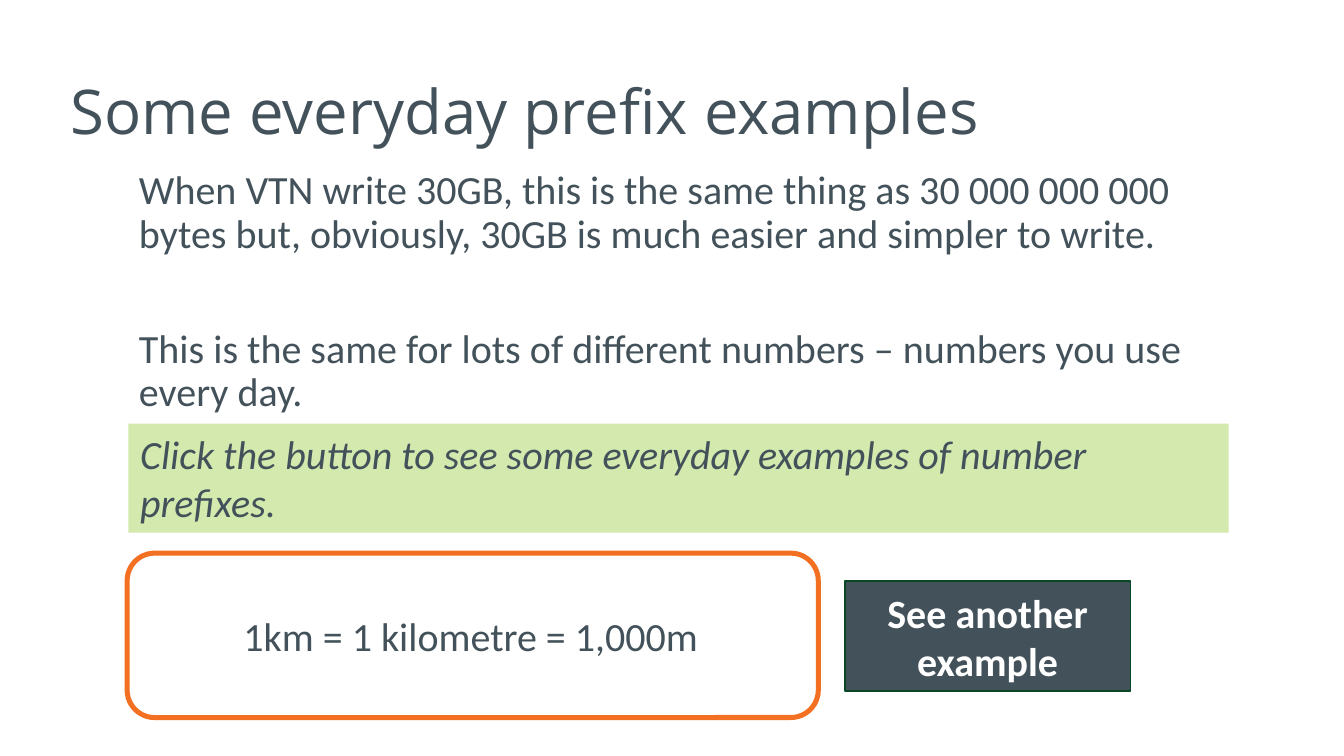
from pptx import Presentation
from pptx.dml.color import RGBColor
from pptx.enum.shapes import MSO_SHAPE
from pptx.enum.text import MSO_ANCHOR, PP_ALIGN
from pptx.util import Inches, Pt

SLATE = RGBColor(0x43, 0x52, 0x5A)
WHITE = RGBColor(0xFF, 0xFF, 0xFF)
ORANGE = RGBColor(0xF3, 0x6F, 0x21)
LIME = RGBColor(0xD3, 0xE9, 0xAD)
FOREST = RGBColor(0x09, 0x47, 0x24)


class SlideBuilder:
    heading_font = "Open Sans"
    body_font = "Calibri"
    body_size = 24
    line_spacing = 0.9

    def __init__(self, deck):
        self.page = deck.slides.add_slide(deck.slide_layouts[6])

    def fill_text(self, shape, texts, font=body_font, size=body_size, color=SLATE,
                  bold=False, italic=False, align=PP_ALIGN.LEFT,
                  anchor=MSO_ANCHOR.TOP, wrap=True):
        frame = shape.text_frame
        frame.word_wrap = wrap
        frame.vertical_anchor = anchor
        frame.text = "\n".join(texts)
        for para in frame.paragraphs:
            para.alignment = align
            for span in para.runs:
                span.font.name = font
                span.font.size = Pt(size)
                span.font.color.rgb = color
                span.font.bold = bold
                span.font.italic = italic
        return frame.paragraphs

    def text(self, bounds, texts, **style):
        box = self.page.shapes.add_textbox(*map(Inches, bounds))
        return self.fill_text(box, texts, **style)

    def title(self, bounds, text):
        paragraphs = self.text(bounds, [text], font=self.heading_font, size=37,
                               anchor=MSO_ANCHOR.MIDDLE)
        paragraphs[0].line_spacing = self.line_spacing

    def body(self, bounds, texts, first_gap, next_gap):
        for index, para in enumerate(self.text(bounds, texts)):
            para.line_spacing = self.line_spacing
            para.space_before = Pt(next_gap if index else first_gap)

    def panel(self, kind, bounds, fill=None, line=None, line_width=1):
        shape = self.page.shapes.add_shape(kind, *map(Inches, bounds))
        shape.shadow.inherit = False
        if fill is None:
            shape.fill.background()
        else:
            shape.fill.solid()
            shape.fill.fore_color.rgb = fill
        if line is None:
            shape.line.fill.background()
        else:
            shape.line.color.rgb = line
            shape.line.width = Pt(line_width)
        return shape


def main():
    deck = Presentation()
    deck.slide_width = Inches(11.2)
    deck.slide_height = Inches(6.3)
    builder = SlideBuilder(deck)

    builder.title((0.49, 0.34, 9.66, 1.22), "Some everyday prefix examples")
    builder.body((1.06, 1.37, 9.09, 2.33), [
        "When VTN write 30GB, this is the same thing as 30 000 000 000 bytes "
        "but, obviously, 30GB is much easier and simpler to write.",
        "This is the same for lots of different numbers – numbers you use every day.",
    ], first_gap=8.4, next_gap=43.2)

    button = builder.panel(MSO_SHAPE.RECTANGLE, (7.04, 4.84, 2.38, 0.92),
                           fill=SLATE, line=FOREST)
    builder.fill_text(button, ["See another example"], color=WHITE, bold=True,
                      align=PP_ALIGN.CENTER, anchor=MSO_ANCHOR.MIDDLE)

    builder.panel(MSO_SHAPE.ROUNDED_RECTANGLE, (1.06, 4.61, 5.76, 1.37),
                  line=ORANGE, line_width=3)
    builder.text((1.93, 5.05, 4.02, 0.5), ["1km = 1 kilometre = 1,000m"], wrap=False)

    prompt = builder.panel(MSO_SHAPE.RECTANGLE, (1.07, 3.53, 9.17, 0.91), fill=LIME)
    builder.fill_text(prompt, [
        "Click the button to see some everyday examples of number prefixes.",
    ], italic=True)

    deck.save("out.pptx")


if __name__ == "__main__":
    main()
